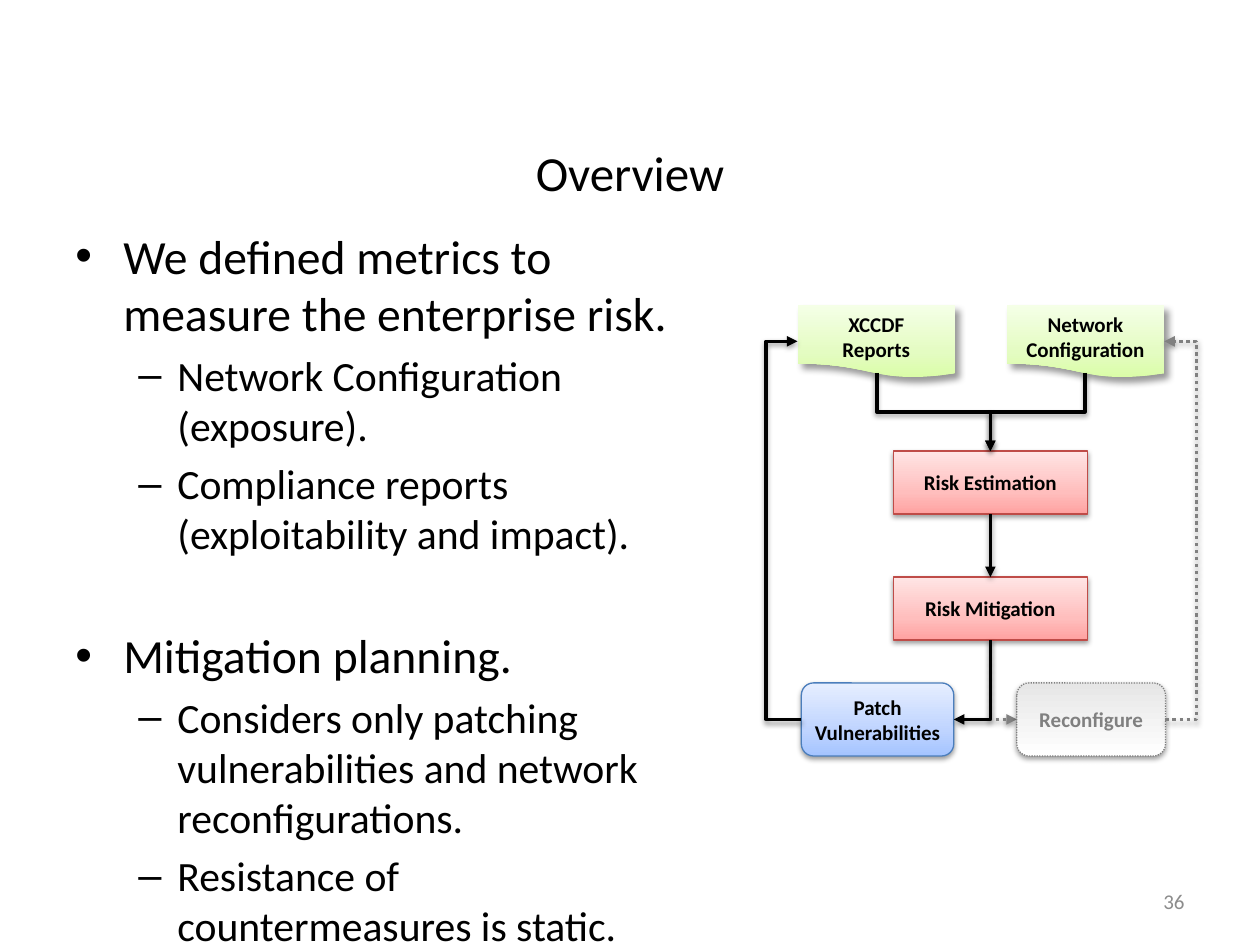
"""Build the overview slide with its risk management flow."""
import dataclasses

import lxml.etree
import pptx
import pptx.dml.color
import pptx.enum.dml
import pptx.enum.shapes
import pptx.enum.text
import pptx.oxml.ns
import pptx.util

Inches = pptx.util.Inches
Pt = pptx.util.Pt
qn = pptx.oxml.ns.qn
Geometry = pptx.enum.shapes.MSO_SHAPE
Connector = pptx.enum.shapes.MSO_CONNECTOR
Align = pptx.enum.text.PP_ALIGN
Anchor = pptx.enum.text.MSO_ANCHOR
DOTTED = pptx.enum.dml.MSO_LINE.ROUND_DOT


@dataclasses.dataclass(frozen=True)
class Theme:
    """Hold the colours, type sizes and shadows of the slide."""
    font: str = "Calibri"
    ink: str = "000000"
    muted: str = "808080"
    number: str = "8C8C8C"
    red_edge: str = "BF4C48"
    blue_edge: str = "4B7EBC"
    green: tuple = ((0, "DAFDA7"), (35, "E4FCC2"), (100, "F5FFE7"))
    red: tuple = ((0, "FFA2A1"), (35, "FFBEBD"), (100, "FFE5E5"))
    blue: tuple = ((0, "A4C4FF"), (35, "BFD4FF"), (100, "E6EEFF"))
    gray: tuple = ((0, "FFFFFF"), (100, "E6E6E6"))
    title_size: float = 28
    level_sizes: tuple = (27.2, 23.8)
    label_size: float = 12
    soft_shadow: tuple = (38, 3.1, 1.6, 90)
    page_shadow: tuple = (40, 4, 4, 48)


THEME = Theme()


def rgb(code):
    """Return the colour for a hex code."""
    return pptx.dml.color.RGBColor.from_string(code)


def apply(target, values):
    """Set each named value on the target."""
    for name, value in values.items():
        setattr(target, name, value)


def place(shape, left, top, width, height):
    """Move and size a shape in inches."""
    apply(shape, {"left": Inches(left), "top": Inches(top),
                  "width": Inches(width), "height": Inches(height)})


def style_font(font, size, color=THEME.ink, bold=False):
    """Give a font its face, size, weight and colour."""
    apply(font, {"name": THEME.font, "size": Pt(size), "bold": bold})
    font.color.rgb = rgb(color)


def add_color(parent, code):
    """Append a solid colour element and return it."""
    return lxml.etree.SubElement(parent, qn("a:srgbClr"), val=code)


def set_shadow(shape, values):
    """Give a shape or connector an outer shadow."""
    alpha, blur, distance, angle = values
    properties = shape._element.spPr
    effects = properties.find(qn("a:effectLst"))
    if effects is None:
        effects = lxml.etree.SubElement(properties, qn("a:effectLst"))
    outer = lxml.etree.SubElement(
        effects, qn("a:outerShdw"), blurRad=str(Pt(blur)), dist=str(Pt(distance)),
        dir=str(angle * 60000), rotWithShape="0")
    lxml.etree.SubElement(add_color(outer, THEME.ink), qn("a:alpha"), val=str(alpha * 1000))


def set_gradient(shape, stops):
    """Fill a shape with colour stops rising from its bottom edge."""
    shape.fill.gradient()
    shape.fill.gradient_angle = 90
    stop_list = shape._element.spPr.find(".//" + qn("a:gsLst"))
    for old in list(stop_list):
        stop_list.remove(old)
    for position, code in stops:
        add_color(lxml.etree.SubElement(stop_list, qn("a:gs"), pos=str(position * 1000)), code)


def add_node(slide, geometry, box, label, stops, edge=None, color=THEME.ink,
             dash=None, margin=0.1, shadow=THEME.soft_shadow):
    """Add a labelled step of the flow."""
    node = slide.shapes.add_shape(geometry, *map(Inches, box))
    set_gradient(node, stops)
    if edge:
        node.line.color.rgb = rgb(edge)
        apply(node.line, {"width": Pt(0.75), "dash_style": dash})
    else:
        node.line.fill.background()
    node.shadow.inherit = False
    set_shadow(node, shadow)
    apply(node.text_frame, {"margin_left": Inches(margin), "margin_right": Inches(margin),
                            "word_wrap": True, "vertical_anchor": Anchor.MIDDLE})
    paragraph = node.text_frame.paragraphs[0]
    apply(paragraph, {"text": label, "alignment": Align.CENTER})
    style_font(paragraph.font, THEME.label_size, color, True)
    return node


def add_document(slide, left, label, margin):
    """Add an input document."""
    document = add_node(slide, Geometry.FLOWCHART_DOCUMENT, (left, 2.42, 1.25, 0.58), label,
                        THEME.green, margin=margin, shadow=THEME.page_shadow)
    document.text_frame.vertical_anchor = Anchor.TOP
    document._element.spPr.find(qn("a:xfrm")).set("flipH", "1")


def style_arrow(arrow, color=THEME.ink, dash=None):
    """Give a connector its line, arrowhead and shadow."""
    arrow.line.color.rgb = rgb(color)
    apply(arrow.line, {"width": Pt(2), "dash_style": dash})
    lxml.etree.SubElement(arrow.line._get_or_add_ln(), qn("a:tailEnd"), type="triangle")
    set_shadow(arrow, THEME.soft_shadow)


def add_drop(slide, start, end, preset, **style):
    """Add an elbow that leaves its start downwards."""
    (x1, y1), (x2, y2) = start, end
    span, drop = abs(x2 - x1), y2 - y1
    arrow = slide.shapes.add_connector(Connector.ELBOW, 0, 0, 0, 0)
    place(arrow, (x1 + x2 - drop) / 2, (y1 + y2 - span) / 2, drop, span)
    properties = arrow._element.spPr
    properties.find(qn("a:prstGeom")).set("prst", preset)
    frame = properties.find(qn("a:xfrm"))
    frame.set("rot", str((270 if x2 > x1 else 90) * 60000))
    if x2 > x1:
        frame.set("flipH", "1")
    style_arrow(arrow, **style)


def add_return(slide, start, end, lane, **style):
    """Add an elbow that runs back up along a lane."""
    arrow = slide.shapes.add_connector(Connector.ELBOW, *map(Inches, start + end))
    guides = arrow._element.spPr.find(qn("a:prstGeom")).get_or_add_avLst()
    bend = round((lane - start[0]) / (end[0] - start[0]) * 100000)
    lxml.etree.SubElement(guides, qn("a:gd"), name="adj1", fmla=f"val {bend}")
    style_arrow(arrow, **style)


def add_points(slide, points):
    """Add the bulleted text from level, space before and wording."""
    body = slide.shapes.add_textbox(*map(Inches, (0.5, 1.75, 5.08, 4.95))).text_frame
    body.word_wrap = True
    levels = ((0.38, 0.38, "•"), (0.81, 0.31, "–"))
    for index, (level, space, wording) in enumerate(points):
        paragraph = body.add_paragraph() if index else body.paragraphs[0]
        margin, hanging, mark = levels[level]
        apply(paragraph, {"text": wording, "level": level, "space_before": Pt(space)})
        properties = paragraph._p.get_or_add_pPr()
        properties.set("marL", str(Inches(margin)))
        properties.set("indent", str(-Inches(hanging)))
        lxml.etree.SubElement(properties, qn("a:buFont"), typeface="Arial")
        lxml.etree.SubElement(properties, qn("a:buChar"), char=mark)
        style_font(paragraph.font, THEME.level_sizes[level])


def add_title(slide, wording):
    """Fill and place the title."""
    title = slide.shapes.title
    place(title, 0.5, 1.08, 9, 0.47)
    apply(title.text_frame, {"text": wording, "vertical_anchor": Anchor.TOP,
                             "auto_size": pptx.enum.text.MSO_AUTO_SIZE.NONE})
    title.text_frame.paragraphs[0].alignment = Align.CENTER
    style_font(title.text_frame.paragraphs[0].font, THEME.title_size)


def add_number(slide, wording):
    """Add the slide number."""
    frame = slide.shapes.add_textbox(*map(Inches, (7.17, 6.95, 2.33, 0.4))).text_frame
    apply(frame, {"word_wrap": True, "vertical_anchor": Anchor.MIDDLE})
    apply(frame.paragraphs[0], {"text": wording, "alignment": Align.RIGHT})
    style_font(frame.paragraphs[0].font, THEME.label_size, THEME.number)


def add_flow(slide):
    """Add the steps of the flow and the arrows between them."""
    optional = {"color": THEME.muted, "dash": DOTTED}
    fork = (7.86, 5.08)
    add_drop(slide, fork, (8.07, 5.71), "bentConnector2", **optional)
    add_document(slide, 7.99, "Network Configuration", 0.1)
    add_document(slide, 6.33, "XCCDF Reports", 0.2)
    estimation, mitigation = [
        add_node(slide, Geometry.RECTANGLE, (7.09, top, 1.54, 0.5), label,
                 THEME.red, THEME.red_edge)
        for top, label in ((3.58, "Risk Estimation"), (4.58, "Risk Mitigation"))]
    add_node(slide, Geometry.ROUNDED_RECTANGLE, (6.36, 5.42, 1.21, 0.58),
             "Patch Vulnerabilities", THEME.blue, THEME.blue_edge, margin=0)
    for document_center in (6.96, 8.61):
        add_drop(slide, (document_center, 2.96), (7.86, 3.58), "bentConnector3")
    add_drop(slide, fork, (7.57, 5.71), "bentConnector2")
    step = slide.shapes.add_connector(Connector.STRAIGHT, 0, 0, 0, 0)
    step.begin_connect(estimation, 2)
    step.end_connect(mitigation, 0)
    style_arrow(step)
    add_return(slide, (6.36, 5.71), (6.33, 2.71), 6.08)
    add_node(slide, Geometry.ROUNDED_RECTANGLE, (8.07, 5.42, 1.18, 0.58), "Reconfigure",
             THEME.gray, THEME.muted, **optional)
    add_return(slide, (9.25, 5.71), (9.24, 2.71), 9.5, **optional)


def main():
    """Build and save the slide."""
    deck = pptx.Presentation()
    apply(deck, {"slide_width": Inches(10), "slide_height": Inches(7.5)})
    slide = deck.slides.add_slide(deck.slide_layouts[5])
    add_title(slide, "Overview")
    add_points(slide, (
        (0, 0, "We defined metrics to measure the enterprise risk."),
        (1, 4.8, "Network Configuration (exposure)."),
        (1, 4.8, "Compliance reports (exploitability and impact)."),
        (0, 39, "Mitigation planning."),
        (1, 4.8, "Considers only patching vulnerabilities and network reconfigurations."),
        (1, 4.8, "Resistance of countermeasures is static."),
    ))
    add_number(slide, "36")
    add_flow(slide)
    deck.save("out.pptx")


if __name__ == "__main__":
    main()
